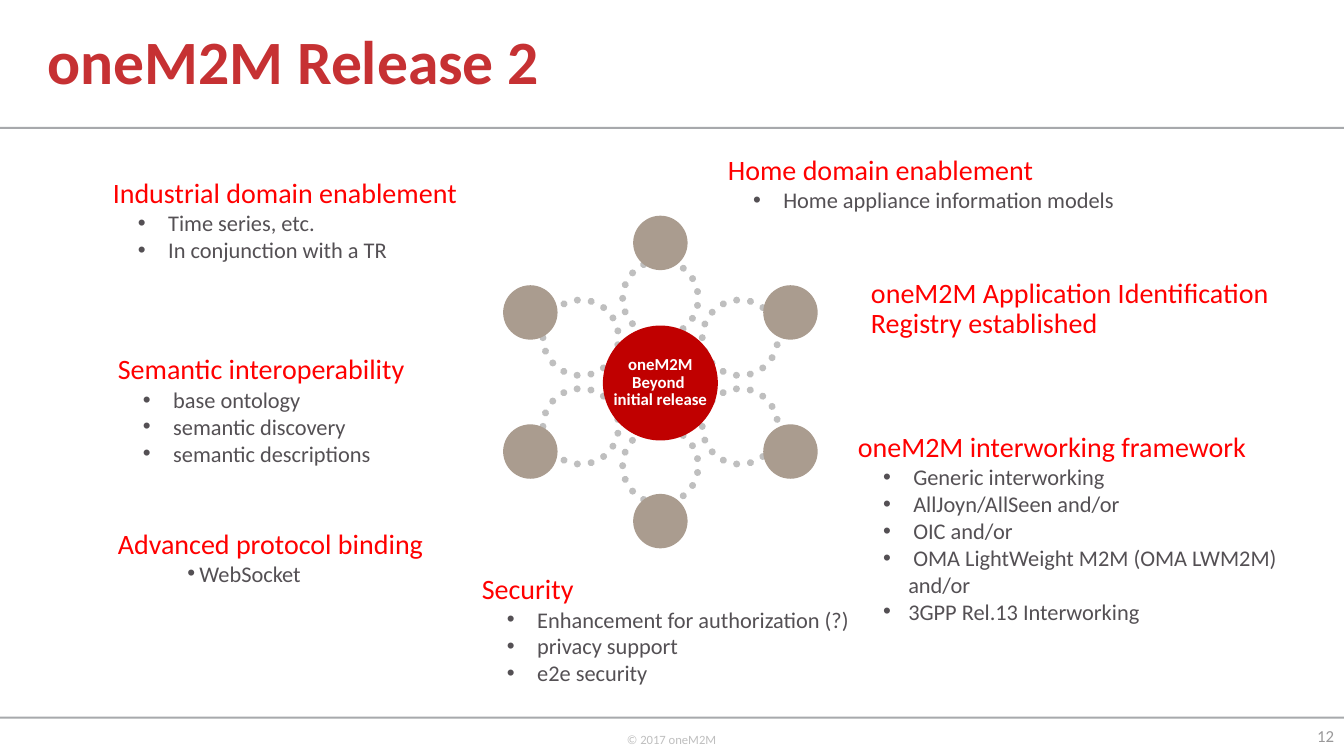
from copy import deepcopy
from dataclasses import dataclass

from lxml.etree import SubElement as Sub
from pptx import Presentation
from pptx.dml.color import RGBColor as Rgb
from pptx.enum.dml import MSO_LINE as Dash
from pptx.enum.shapes import MSO_SHAPE as Kind
from pptx.enum.text import MSO_ANCHOR as Anchor, PP_ALIGN as Align
from pptx.oxml.ns import qn
from pptx.util import Inches, Pt

COLORS = {
    "rule": "A7A9AC", "title": "C63133", "head": "FF0000", "item": "545054",
    "dots": "BFBFBF", "node": "AA9C8F", "hub": "C00000", "white": "FFFFFF",
    "page": "999899",
}
FONTS = {
    "title": {"size": Pt(44), "bold": True},
    "head": {"size": Pt(20)},
    "item": {"size": Pt(16)},
    "white": {"size": Pt(12), "bold": True},
    "dots": {"size": Pt(9)},
    "page": {"size": Pt(12)},
}
MID_X, MID_Y = 6.55, 3.79


@dataclass
class Topic:
    left: float
    top: float
    width: float
    height: float
    head: str
    items: tuple = ()
    pitch: float = 0.9
    margin: float = 0.5
    hang: float = 0.25


@dataclass
class Spoke:
    """Offsets of a node and its dotted ring from the centre."""
    node: tuple
    ring: tuple


TOPICS = [
    Topic(1.02, 1.73, 4.15, 0.94, "Industrial domain enablement",
          (" Time series, etc.", " In conjunction with a TR")),
    Topic(1.07, 3.48, 4.17, 1.42, "Semantic interoperability",
          (" base ontology", " semantic discovery", " semantic descriptions")),
    Topic(4.68, 5.66, 4.41, 1.21, "Security",
          (" Enhancement for authorization (?)", " privacy support",
           " e2e security")),
    Topic(8.41, 4.25, 4.92, 2.63, "oneM2M interworking framework",
          (" Generic interworking", " AllJoyn/AllSeen and/or", " OIC and/or",
           " OMA LightWeight M2M (OMA LWM2M) \vand/or",
           "3GPP Rel.13 Interworking")),
    Topic(7.12, 1.5, 4.59, 0.98, "Home domain enablement",
          (" Home appliance information models",)),
    Topic(8.54, 2.72, 4.15, 1.01,
          "oneM2M Application Identification Registry established"),
    Topic(1.07, 5.17, 3.65, 0.92, "Advanced protocol binding",
          ("WebSocket",), pitch=1.0, margin=0.81, hang=0.12),
]
SPOKES = [
    Spoke((dx * 1.29, dy * 0.69), (dx * 0.79, dy * 0.44)) if dx
    else Spoke((0, dy * 1.38), (0, dy * 0.83))
    for dy in (-1, 1) for dx in (0, 1, -1)
]


def paint(name: str) -> Rgb:
    return Rgb.from_string(COLORS[name])


def apply(target, **values) -> None:
    for key, value in values.items():
        setattr(target, key, value)


def write(par, text: str, style: str, **form) -> None:
    """Fill a paragraph, giving runs and line breaks the same font."""
    par.text = text
    apply(par, **form)
    for run in par.runs:
        apply(run.font, name="Calibri", **FONTS[style])
        run.font.color.rgb = paint(style)
    for gap in par._p.findall(qn("a:br")):
        gap.insert(0, deepcopy(par.runs[0]._r.rPr))


def add_text(slide, at: tuple, text: str, style: str, form: dict, **frame):
    box = slide.shapes.add_textbox(*map(Inches, at)).text_frame
    apply(box, **{"word_wrap": True, **frame})
    write(box.paragraphs[0], text, style, **form)
    return box


def add_shape(slide, kind: Kind, at: tuple, fill: str = ""):
    shape = slide.shapes.add_shape(kind, *map(Inches, at))
    shape.shadow.inherit = False
    if fill:
        shape.fill.solid()
        shape.fill.fore_color.rgb = paint(fill)
        shape.line.fill.background()
    else:
        shape.fill.background()
    return shape


def add_disc(slide, x: float, y: float, size: float, fill: str = ""):
    at = (x - size / 2, y - size / 2, size, size)
    return add_shape(slide, Kind.OVAL, at, fill)


def add_ring(slide, x: float, y: float) -> None:
    ring = add_disc(slide, x, y, 0.75)
    ring.line.color.rgb = paint("dots")
    apply(ring.line, width=Pt(5), dash_style=Dash.ROUND_DOT)
    ring.line._get_or_add_ln().set("cap", "rnd")
    if y > MID_Y:
        ring._element.spPr.xfrm.set("flipV", "1")


def add_topic(slide, topic: Topic) -> None:
    at = (topic.left, topic.top, topic.width, topic.height)
    box = add_text(slide, at, topic.head, "head",
                   {"line_spacing": topic.pitch})
    for item in topic.items:
        par = box.add_paragraph()
        props = par._p.get_or_add_pPr()
        props.set("marL", str(Inches(topic.margin)))
        props.set("indent", str(-Inches(topic.hang)))
        Sub(props, qn("a:buFont")).set("typeface", "Arial")
        Sub(props, qn("a:buChar")).set("char", "•")
        write(par, item, "item", level=1)


def add_wheel(slide) -> None:
    for spoke in SPOKES:
        add_ring(slide, MID_X + spoke.ring[0], MID_Y + spoke.ring[1])
    for spoke in SPOKES:
        add_disc(slide, MID_X + spoke.node[0], MID_Y + spoke.node[1],
                 0.54, "node")
    hub = add_disc(slide, MID_X, 3.8, 1.14, "hub").text_frame
    apply(hub, margin_left=0, margin_right=0, margin_top=0, margin_bottom=0,
          word_wrap=False, vertical_anchor=Anchor.MIDDLE)
    for row, text in enumerate(("oneM2M", "Beyond ", "initial release")):
        par = hub.add_paragraph() if row else hub.paragraphs[0]
        write(par, text, "white", alignment=Align.CENTER, line_spacing=0.85)


def main() -> None:
    deck = Presentation()
    apply(deck, slide_width=Inches(13.33), slide_height=Inches(7.5))
    slide = deck.slides.add_slide(deck.slide_layouts[6])
    for top in (1.26, 7.11):
        add_shape(slide, Kind.RECTANGLE, (0, top, 13.33, 0.02), "rule")
    add_text(slide, (6.12, 7.21, 1.1, 0.4), "© 2017 oneM2M", "dots", {},
             word_wrap=False)
    add_text(slide, (0.37, 0, 8.59, 1.28), "oneM2M Release 2", "title",
             {"line_spacing": 0.9}, vertical_anchor=Anchor.MIDDLE)
    add_wheel(slide)
    for topic in TOPICS:
        add_topic(slide, topic)
    add_text(slide, (12.79, 7.1, 0.54, 0.4), "12", "page",
             {"alignment": Align.RIGHT}, vertical_anchor=Anchor.MIDDLE)
    deck.save("out.pptx")


if __name__ == "__main__":
    main()
